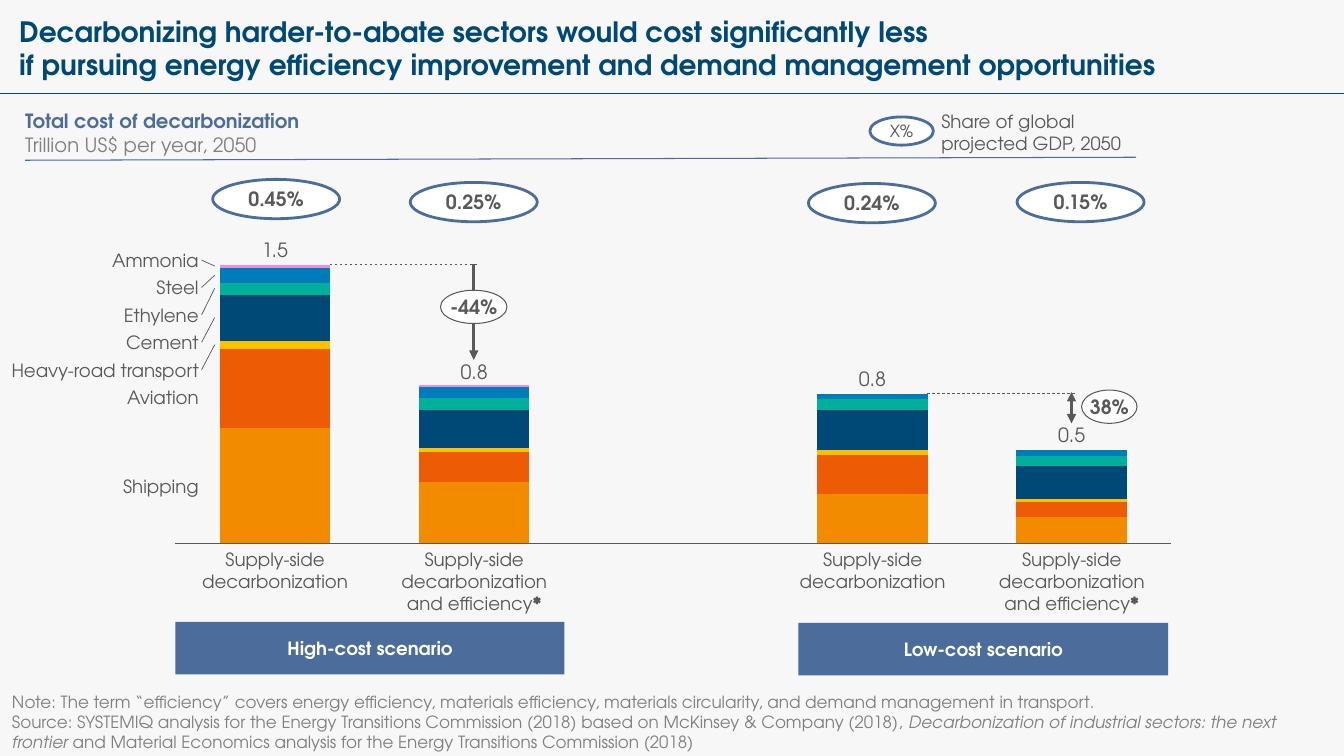
from dataclasses import dataclass

from lxml.etree import SubElement
from pptx import Presentation
from pptx.chart.data import CategoryChartData
from pptx.dml.color import RGBColor
from pptx.enum.chart import XL_CHART_TYPE as CT, XL_TICK_LABEL_POSITION as TLP, XL_TICK_MARK as TM
from pptx.enum.dml import MSO_LINE
from pptx.enum.shapes import MSO_CONNECTOR, MSO_SHAPE as SHAPE
from pptx.enum.text import MSO_ANCHOR as ANCHOR, MSO_AUTO_SIZE, PP_ALIGN as ALIGN
from pptx.oxml import parse_xml
from pptx.oxml.ns import nsdecls, qn
from pptx.util import Inches, Length, Pt

FONT = "TeX Gyre Adventor"
GREY, SOFT, NAVY, SLATE, WHITE = "595959", "808080", "004876", "4C6C9C", "FFFFFF"
FIRST_BAR, BAR_STEP = 27.28, 19.76
LABEL_TOP, LABEL_STEP, LABEL_HEIGHT = 24.7, 2.72, 2.2


@dataclass(frozen=True)
class Sector:
    """A stacked cost component, with its label row and leader end."""
    name: str
    color: str
    costs: tuple[int | None, ...]
    label_step: float
    leader_row: float | None = None


@dataclass(frozen=True)
class Bar:
    """The annotations of one bar: total, GDP share and caption."""
    slot: int
    total: str
    total_row: float
    share: str
    share_col: float
    share_row: float
    efficient: bool = False


@dataclass(frozen=True)
class Line:
    """A straight line between two grid points."""
    x1: float
    y1: float
    x2: float
    y2: float
    color: str = GREY
    width: float = 0.5
    dashed: bool = False
    ends: tuple[str, ...] = ()


@dataclass(frozen=True)
class Badge:
    """A filled shape holding one short text."""
    text: str
    x: float
    y: float
    w: float
    h: float
    kind: SHAPE = SHAPE.OVAL
    fill: str = WHITE
    line: str | None = SLATE
    weight: float = 2
    size: int = 14
    color: str = GREY
    bold: bool = True


SECTORS = (
    Sector("Shipping", "F38B00", (100, 53, None, 43, 23), 8.24),
    Sector("Aviation", "ED5C05", (69, 26, None, 34, 13), 5),
    Sector("Heavy-road transport", "FFC000", (7, 4, None, 4, 2), 4, 34.2),
    Sector("Cement", NAVY, (40, 33, None, 35, 29), 3, 31.5),
    Sector("Ethylene", "00B09A", (10, 10, None, 9, 9), 2, 28.6),
    Sector("Steel", "007CBA", (13, 10, None, 5, 5), 1, 27.3),
    Sector("Ammonia", "EE8CE2", (3, 2, None, 0, 0), 0, 26.4),
)
BARS = (
    Bar(0, "1.5", 23.6, "0.45%", 21.1, 17.8),
    Bar(1, "0.8", 35.7, "0.25%", 40.7, 18.1, True),
    Bar(3, "0.8", 36.4, "0.24%", 80.2, 18.2),
    Bar(4, "0.5", 42, "0.15%", 100.9, 18.1, True),
)
LINES = (
    Line(0, 9.3, 133.3, 9.3, NAVY, 0.75),
    Line(2.5, 15.9, 112.7, 15.6, SLATE, 0.75),
    Line(32.7, 26.2, 47.4, 26.2, dashed=True),
    Line(47, 26.2, 47, 35.7, width=2.25, ends=("tailEnd",)),
    Line(92, 39, 106.7, 39, dashed=True),
    Line(106.3, 42, 106.3, 38.9, width=2.25, ends=("headEnd", "tailEnd")),
)
BADGES = (
    Badge("38%", 107.3, 38.7, 5.5, 3.3, line=GREY, weight=0.75),
    Badge("-44%", 43.7, 28.8, 6.6, 3.3, line=GREY, weight=0.75),
    Badge("X%", 86.3, 11.6, 6.3, 2.8, size=12, bold=False),
    Badge("High-cost scenario", 17.4, 61.7, 38.6, 5.2, SHAPE.RECTANGLE, SLATE, None, size=13, color=WHITE),
    Badge("Low-cost scenario", 79.2, 61.8, 36.7, 5.2, SHAPE.RECTANGLE, SLATE, None, size=13, color=WHITE),
)


def grid(cells: float) -> Length:
    """Convert grid cells, ten to the inch, to a length."""
    return Inches(cells / 10)


def rgb(color: str) -> RGBColor:
    """Turn a hex string into a colour."""
    return RGBColor.from_string(color)


def write(p, text: str, *, size: float = 13, color: str = GREY, bold: bool = False, italic: bool = False) -> None:
    """Add formatted text to a paragraph, breaking at newlines."""
    for i, part in enumerate(text.split("\n")):
        if i:
            p.add_line_break()
        r = p.add_run()
        r.text = part
        r.font.name, r.font.size = FONT, Pt(size)
        r.font.bold, r.font.italic = bold, italic
        r.font.color.rgb = rgb(color)


def frame(sp, align: ALIGN = ALIGN.LEFT, anchor: ANCHOR = ANCHOR.TOP, wrap: bool = True, inset: tuple = (0, 0)):
    """Prepare the text frame of a shape and return it."""
    tf = sp.text_frame
    tf.auto_size = MSO_AUTO_SIZE.NONE
    tf.word_wrap, tf.vertical_anchor = wrap, anchor
    tf.margin_left = tf.margin_right = grid(inset[0])
    tf.margin_top = tf.margin_bottom = grid(inset[1])
    tf.paragraphs[0].alignment = align
    return tf


def text_box(s, x: float, y: float, w: float, h: float, **layout):
    """Add a text box on the grid and return its text frame."""
    return frame(s.shapes.add_textbox(grid(x), grid(y), grid(w), grid(h)), **layout)


def draw_line(s, line: Line) -> None:
    """Draw a line with optional dashes and arrowheads."""
    c = s.shapes.add_connector(MSO_CONNECTOR.STRAIGHT, *map(grid, (line.x1, line.y1, line.x2, line.y2)))
    c.line.color.rgb, c.line.width = rgb(line.color), Pt(line.width)
    if line.dashed:
        c.line.dash_style = MSO_LINE.DASH
    for end in line.ends:
        SubElement(c.line._get_or_add_ln(), qn(f"a:{end}"), type="triangle")
    SubElement(c._element.spPr, qn("a:effectLst"))


def draw_badge(s, badge: Badge) -> None:
    """Draw a badge with centred text."""
    sp = s.shapes.add_shape(badge.kind, *map(grid, (badge.x, badge.y, badge.w, badge.h)))
    sp.shadow.inherit = False
    sp.fill.solid()
    sp.fill.fore_color.rgb = rgb(badge.fill)
    if badge.line:
        sp.line.color.rgb, sp.line.width = rgb(badge.line), Pt(badge.weight)
    else:
        sp.line.fill.background()
    tf = frame(sp, ALIGN.CENTER, ANCHOR.MIDDLE, wrap=False)
    write(tf.paragraphs[0], badge.text, size=badge.size, color=badge.color, bold=badge.bold)


def draw_chart(s) -> None:
    """Draw the stacked column chart of costs by sector."""
    data = CategoryChartData()
    data.categories = [str(n) for n in range(1, 6)]
    for sector in SECTORS:
        data.add_series(sector.name, sector.costs)
    chart = s.shapes.add_chart(CT.COLUMN_STACKED, *map(grid, (16.5, 23.8, 100.6, 31)), data).chart
    chart.has_legend = chart.has_title = False
    chart.font.name, chart.font.size, chart.font.color.rgb = FONT, Pt(10), rgb(GREY)
    plot = chart.plots[0]
    plot.gap_width, plot.overlap, plot.vary_by_categories = 80, 100, False
    for series, sector in zip(plot.series, SECTORS):
        series.format.fill.solid()
        series.format.fill.fore_color.rgb = rgb(sector.color)
    cats, vals = chart.category_axis, chart.value_axis
    cats.tick_label_position = TLP.NONE
    cats.major_tick_mark = cats.minor_tick_mark = TM.NONE
    cats.format.line.color.rgb, cats.format.line.width = rgb(GREY), Pt(0.75)
    vals.minimum_scale, vals.maximum_scale = 0, 256
    vals.has_major_gridlines = vals.visible = False
    area = chart._chartSpace.chart.plotArea
    for old in area.findall(qn("c:layout")):
        area.remove(old)
    places = "".join(f'<c:{k} val="{v}"/>' for k, v in (
        ("layoutTarget", "inner"), ("xMode", "edge"), ("yMode", "edge"),
        ("x", 0.009), ("y", 0.029), ("w", 0.982), ("h", 0.942)))
    area.insert(0, parse_xml(f'<c:layout {nsdecls("c")}><c:manualLayout>{places}</c:manualLayout></c:layout>'))


def draw_sector_label(s, sector: Sector) -> None:
    """Write a sector name beside the first bar, with its leader."""
    top = LABEL_TOP + LABEL_STEP * sector.label_step
    tf = text_box(s, 0.2, top, 19.5, LABEL_HEIGHT, align=ALIGN.RIGHT, anchor=ANCHOR.MIDDLE)
    write(tf.paragraphs[0], sector.name)
    if sector.leader_row:
        draw_line(s, Line(20, top + LABEL_HEIGHT / 2, 21.3, sector.leader_row))


def draw_bar_notes(s, bar: Bar) -> None:
    """Write the total, caption and GDP share of a bar."""
    center = FIRST_BAR + BAR_STEP * bar.slot
    tf = text_box(s, center - 3, bar.total_row, 6, 2.3, align=ALIGN.CENTER, anchor=ANCHOR.BOTTOM)
    write(tf.paragraphs[0], bar.total, size=14)
    p = text_box(s, center - 7.4, 54.4, 14.8, 6.5, align=ALIGN.CENTER).paragraphs[0]
    write(p, "Supply-side decarbonization" + " and efficiency" * bar.efficient)
    if bar.efficient:
        write(p, "*", bold=True)
    draw_badge(s, Badge(bar.share, bar.share_col, bar.share_row, 12.6, 3.9))


def draw_texts(s) -> None:
    """Write the title, chart heading, legend and footnotes."""
    sp = s.shapes.title
    sp.left, sp.top, sp.width, sp.height = map(grid, (1.9, 1.4, 124.6, 6.7))
    p = frame(sp, anchor=ANCHOR.MIDDLE).paragraphs[0]
    write(p, "Decarbonizing harder-to-abate sectors would cost significantly less\n"
          "if pursuing energy efficiency improvement and demand management opportunities",
          size=20, color=NAVY, bold=True)
    tf = text_box(s, 2.5, 10.7, 60, 4.8, anchor=ANCHOR.BOTTOM)
    write(tf.paragraphs[0], "Total cost of decarbonization", size=14, color=SLATE, bold=True)
    write(tf.add_paragraph(), "Trillion US$ per year, 2050", size=14, color=SOFT)
    tf = text_box(s, 92.4, 10.5, 21, 5.4, inset=(1, 0.5))
    write(tf.paragraphs[0], "Share of global projected GDP, 2050")
    tf = text_box(s, 0.2, 68.1, 128.8, 6.9, inset=(1, 0.5))
    write(tf.paragraphs[0], "Note: The term “efficiency” covers energy efficiency, materials efficiency, "
          "materials circularity, and demand management in transport.", size=12, color=SOFT)
    p = tf.add_paragraph()
    write(p, "Source: SYSTEMIQ analysis for the Energy Transitions Commission (2018) "
          "based on McKinsey & Company (2018), ", size=12, color=SOFT)
    write(p, "Decarbonization of industrial sectors: the next frontier ", size=12, color=SOFT, italic=True)
    write(p, "and Material Economics analysis for the Energy Transitions Commission (2018)", size=12, color=SOFT)


def main() -> None:
    """Build the slide and save it."""
    prs = Presentation()
    prs.slide_width, prs.slide_height = grid(133.33), grid(75)
    s = prs.slides.add_slide(prs.slide_layouts[5])
    s.background.fill.solid()
    s.background.fill.fore_color.rgb = rgb("F7F7F7")
    draw_chart(s)
    for items, draw in ((LINES, draw_line), (SECTORS, draw_sector_label), (BARS, draw_bar_notes), (BADGES, draw_badge)):
        for item in items:
            draw(s, item)
    draw_texts(s)
    prs.save("out.pptx")


if __name__ == "__main__":
    main()
